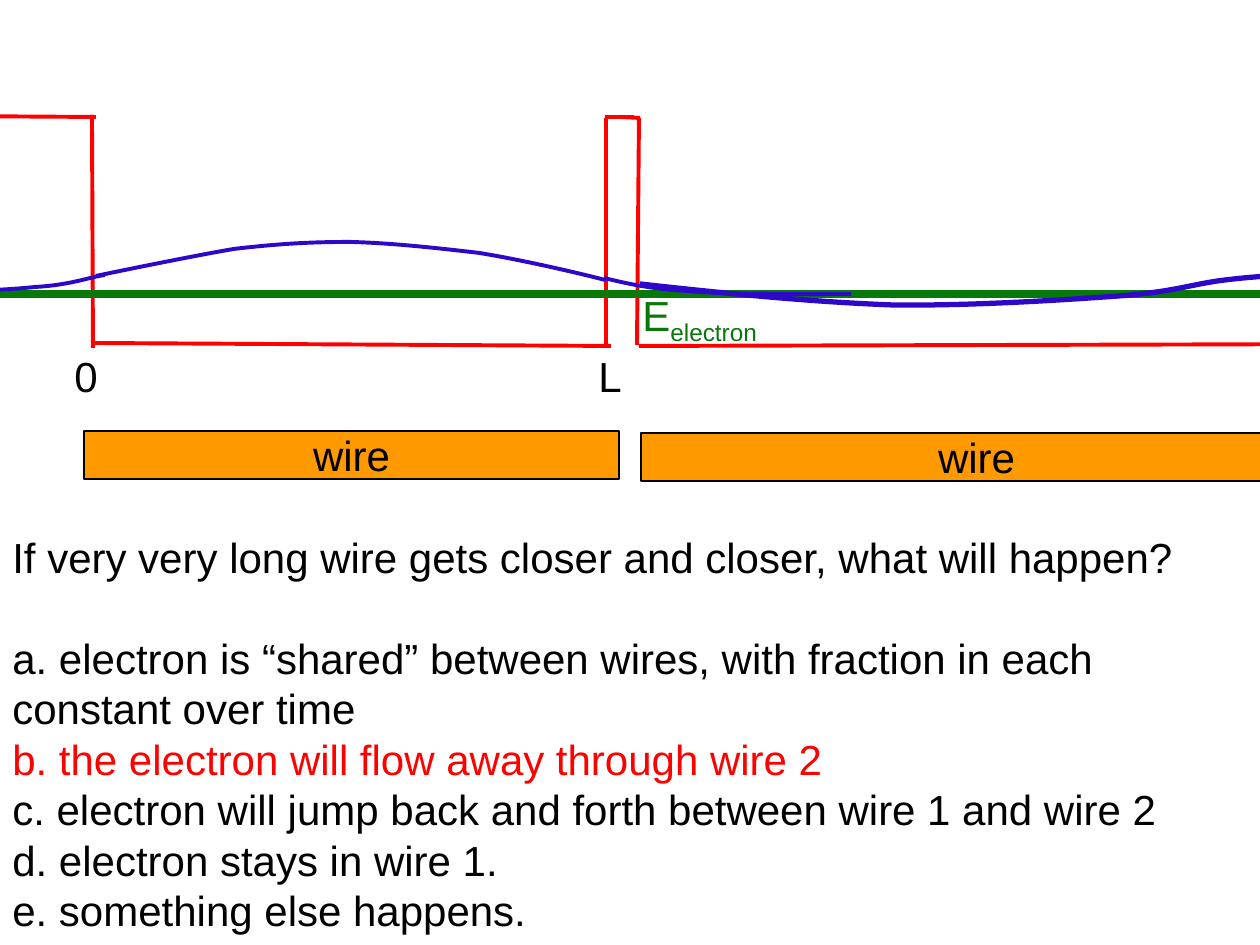
from lxml.etree import SubElement
from pptx import Presentation
from pptx.dml.color import RGBColor
from pptx.enum.shapes import MSO_CONNECTOR as Connector, MSO_SHAPE as Shape
from pptx.enum.text import MSO_ANCHOR as Anchor, PP_ALIGN as Align
from pptx.oxml.ns import qn
from pptx.util import Emu, Pt

PX = 914400 / 126
RED = RGBColor(0xFF, 0x00, 0x00)
GREEN = RGBColor(0x08, 0x78, 0x0B)
VIOLET = RGBColor(0x2D, 0x08, 0xCA)
ORANGE = RGBColor(0xFF, 0x99, 0x00)
BLACK = RGBColor(0x00, 0x00, 0x00)

WALLS = [
    ((92, 0), (93, 233)),
    ((-208, 0), (96, 2)),
    ((606, 3), (606, 230)),
    ((605, 2), (634, 2)),
    ((94, 228), (611, 231)),
    ((639, 3), (637, 230)),
    ((640, 3), (620, 2)),
    ((1740, 228), (639, 231)),
]
WAVES = [
    ([(96, -18), (120, -23), (193, -38), (234, -45), (277, -50), (309, -52),
      (350, -52), (391, -51), (436, -46), (479, -41), (522, -34), (578, -21),
      (605, -14)], 2.25),
    ([(604, -16), (617, -13), (646, -5), (688, -3), (728, 1), (816, 0),
      (851, 0)], 2.25),
    ([(105, -19), (93, -18), (72, -9), (35, -7), (-3, -3), (-60, -2),
      (-118, 0)], 2.25),
    ([(640, -10), (730, 0), (813, 8), (892, 11), (971, 12), (1063, 6),
      (1119, 2), (1174, -2), (1192, -10), (1225, -14), (1257, -18),
      (1299, -20), (1318, -21)], 3),
]
QUESTION = "If very very long wire gets closer and closer, what will happen?"
ANSWERS = [
    "a. electron is “shared” between wires, with fraction in each constant over time",
    "b. the electron will flow away through wire 2",
    "c. electron will jump back and forth between wire 1 and wire 2",
    "d. electron stays in wire 1.",
    "e. something else happens.",
]
CORRECT = 1


def px(value):
    return Emu(round(value * PX))


def set_font(paragraph, color):
    font = paragraph.font
    font.name, font.size = "Arial", Pt(24)
    font.color.rgb = color


def add_text(slide, left, top, width, height):
    box = slide.shapes.add_textbox(px(left), px(top), px(width), px(height))
    box.text_frame.word_wrap = True
    return box.text_frame


def add_line(slide, start, end, color, weight):
    line = slide.shapes.add_connector(
        Connector.STRAIGHT, *(px(value) for value in (*start, *end)))
    line.line.color.rgb = color
    line.line.width = Pt(weight)
    SubElement(line._element.spPr, qn("a:effectLst"))


def bend_segments(freeform):
    outline = next(freeform._element.iter(qn("a:moveTo"))).getparent()
    segments = outline.findall(qn("a:lnTo"))
    for first in range(0, len(segments), 3):
        curve = SubElement(outline, qn("a:cubicBezTo"))
        for segment in segments[first:first + 3]:
            curve.append(segment[0])
            outline.remove(segment)


def add_potential(slide, left, top):
    for start, end in WALLS:
        add_line(slide, (left + start[0], top + start[1]),
                 (left + end[0], top + end[1]), RED, 2.25)


def add_axis_labels(slide, left, top):
    labels = add_text(slide, left, top, 573, 63).paragraphs[0]
    labels.text = "0\tL"
    set_font(labels, BLACK)
    settings = labels._p.get_or_add_pPr()
    tab_list = settings.makeelement(qn("a:tabLst"), {})
    SubElement(tab_list, qn("a:tab"), pos=str(px(524)), algn="l")
    settings.insert(0, tab_list)


def add_energy_level(slide, left, top):
    add_line(slide, (left, top), (left + 1428, top), GREEN, 4.5)
    label = add_text(slide, left + 630, top - 11, 152, 63).paragraphs[0]
    label.add_run().text = "E"
    subscript = label.add_run()
    subscript.text = "electron"
    subscript._r.get_or_add_rPr().set("baseline", "-25000")
    set_font(label, GREEN)


def add_wave(slide, left, top, knots, weight):
    points = [(px(left + x), px(top + y)) for x, y in knots]
    builder = slide.shapes.build_freeform(*points[0], scale=1.0)
    builder.add_line_segments(points[1:], close=False)
    wave = builder.convert_to_shape()
    bend_segments(wave)
    wave.shadow.inherit = False
    wave.fill.background()
    wave.line.color.rgb = VIOLET
    wave.line.width = Pt(weight)


def add_wire(slide, left, top, width, height):
    wire = slide.shapes.add_shape(
        Shape.RECTANGLE, px(left), px(top), px(width), px(height))
    wire.shadow.inherit = False
    wire.fill.solid()
    wire.fill.fore_color.rgb = ORANGE
    wire.line.color.rgb = BLACK
    wire.line.width = Pt(0.75)
    wire.text_frame.word_wrap = False
    wire.text_frame.vertical_anchor = Anchor.MIDDLE
    name = wire.text_frame.paragraphs[0]
    name.text = "wire"
    name.alignment = Align.CENTER
    set_font(name, BLACK)


def add_question(slide, left, top, width, height):
    frame = add_text(slide, left, top, width, height)
    question = frame.paragraphs[0]
    question.text = QUESTION
    question.space_after = px(51)
    set_font(question, BLACK)
    for index, text in enumerate(ANSWERS):
        answer = frame.add_paragraph()
        answer.text = text
        set_font(answer, RED if index == CORRECT else BLACK)


def main():
    deck = Presentation()
    deck.slide_width, deck.slide_height = px(1260), px(945)
    slide = deck.slides.add_slide(deck.slide_layouts[6])
    add_question(slide, 0, 525, 1260, 420)
    add_potential(slide, 0, 115)
    add_axis_labels(slide, 62, 344)
    add_energy_level(slide, 0, 294)
    for knots, weight in WAVES:
        add_wave(slide, 0, 294, knots, weight)
    add_wire(slide, 84, 431, 535, 48)
    add_wire(slide, 641, 433, 671, 48)
    deck.save("out.pptx")


if __name__ == "__main__":
    main()
